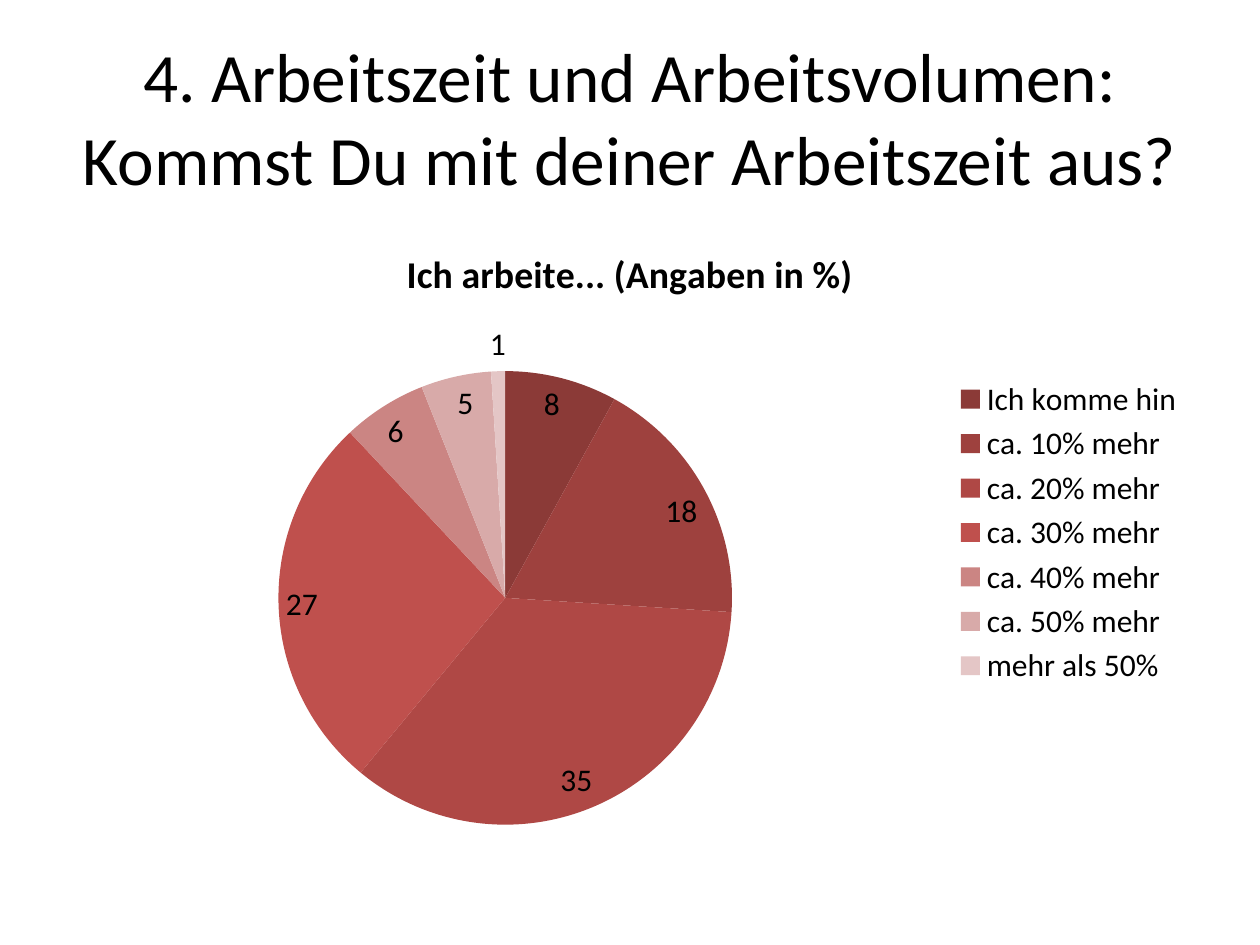
from typing import NamedTuple

from lxml import etree
from pptx import Presentation
from pptx.chart.chart import Chart
from pptx.chart.data import CategoryChartData
from pptx.dml.color import RGBColor
from pptx.enum import chart as chart_enum, text
from pptx.oxml import ns
from pptx.text.text import Font
from pptx.util import Cm, Pt

FONT = "Calibri"
CHART_TITLE = "Ich arbeite... (Angaben in %)"


class Answer(NamedTuple):
    label: str
    percent: int
    colour: str


ANSWERS = [
    Answer("Ich komme hin", 8, "8B3A37"),
    Answer("ca. 10% mehr", 18, "9E413E"),
    Answer("ca. 20% mehr", 35, "AF4845"),
    Answer("ca. 30% mehr", 27, "BF504D"),
    Answer("ca. 40% mehr", 6, "CB8583"),
    Answer("ca. 50% mehr", 5, "D8AAA9"),
    Answer("mehr als 50%", 1, "E4C6C6"),
]


def rgb(colour: str) -> RGBColor:
    return RGBColor.from_string(colour)


def style_font(font: Font, size: float, bold: bool = False) -> None:
    font.name = FONT
    font.size = Pt(size)
    font.bold = bold
    font.color.rgb = rgb("000000")


def add_title(slide, wording: str) -> None:
    box = slide.shapes.add_textbox(Cm(1.27), Cm(0.76), Cm(22.86), Cm(3.18))
    frame = box.text_frame
    frame.word_wrap = True
    frame.vertical_anchor = text.MSO_ANCHOR.MIDDLE
    paragraph = frame.paragraphs[0]
    paragraph.text = wording
    paragraph.alignment = text.PP_ALIGN.CENTER
    style_font(paragraph.font, 39.6)


def place_plot(chart: Chart, x: float, y: float, w: float, h: float) -> None:
    """Fix the inner plot area, in fractions of the chart."""
    plot_area = chart.plots[0]._element.getparent()
    for old in plot_area.findall(ns.qn("c:layout")):
        plot_area.remove(old)
    layout = etree.Element(ns.qn("c:layout"))
    manual = etree.SubElement(layout, ns.qn("c:manualLayout"))
    settings = {"layoutTarget": "inner", "xMode": "edge", "yMode": "edge",
                "x": x, "y": y, "w": w, "h": h}
    for name, value in settings.items():
        etree.SubElement(manual, ns.qn(f"c:{name}")).set("val", str(value))
    plot_area.insert(0, layout)


def add_pie(slide, answers: list[Answer]) -> None:
    data = CategoryChartData()
    data.categories = [answer.label for answer in answers]
    data.add_series(CHART_TITLE, [answer.percent for answer in answers])
    chart = slide.shapes.add_chart(
        chart_enum.XL_CHART_TYPE.PIE,
        Cm(1.27), Cm(4.45), Cm(22.86), Cm(12.57), data).chart
    style_font(chart.font, 18)

    chart.has_title = True
    chart.chart_title.include_in_layout = False
    heading = chart.chart_title.text_frame.paragraphs[0]
    heading.text = CHART_TITLE
    style_font(heading.font, 21.6, bold=True)

    chart.has_legend = True
    chart.legend.position = chart_enum.XL_LEGEND_POSITION.RIGHT
    chart.legend.include_in_layout = False
    style_font(chart.legend.font, 18)

    plot = chart.plots[0]
    plot.vary_by_categories = True
    series = plot.series[0]
    for index, answer in enumerate(answers):
        fill = series.points[index].format.fill
        fill.solid()
        fill.fore_color.rgb = rgb(answer.colour)

    labels = series.data_labels
    labels.show_value = True
    labels.position = chart_enum.XL_LABEL_POSITION.INSIDE_END
    style_font(labels.font, 18)
    smallest = series.points[len(answers) - 1].data_label
    style_font(smallest.font, 18)
    smallest.position = chart_enum.XL_LABEL_POSITION.OUTSIDE_END
    place_plot(chart, 0.19, 0.24, 0.4, 0.73)


def main() -> None:
    presentation = Presentation()
    presentation.slide_width = Cm(25.4)
    presentation.slide_height = Cm(19.05)
    slide = presentation.slides.add_slide(presentation.slide_layouts[6])
    add_title(slide, "4. Arbeitszeit und Arbeitsvolumen: "
                     "Kommst Du mit deiner Arbeitszeit aus?")
    add_pie(slide, ANSWERS)
    presentation.save("out.pptx")


if __name__ == "__main__":
    main()
